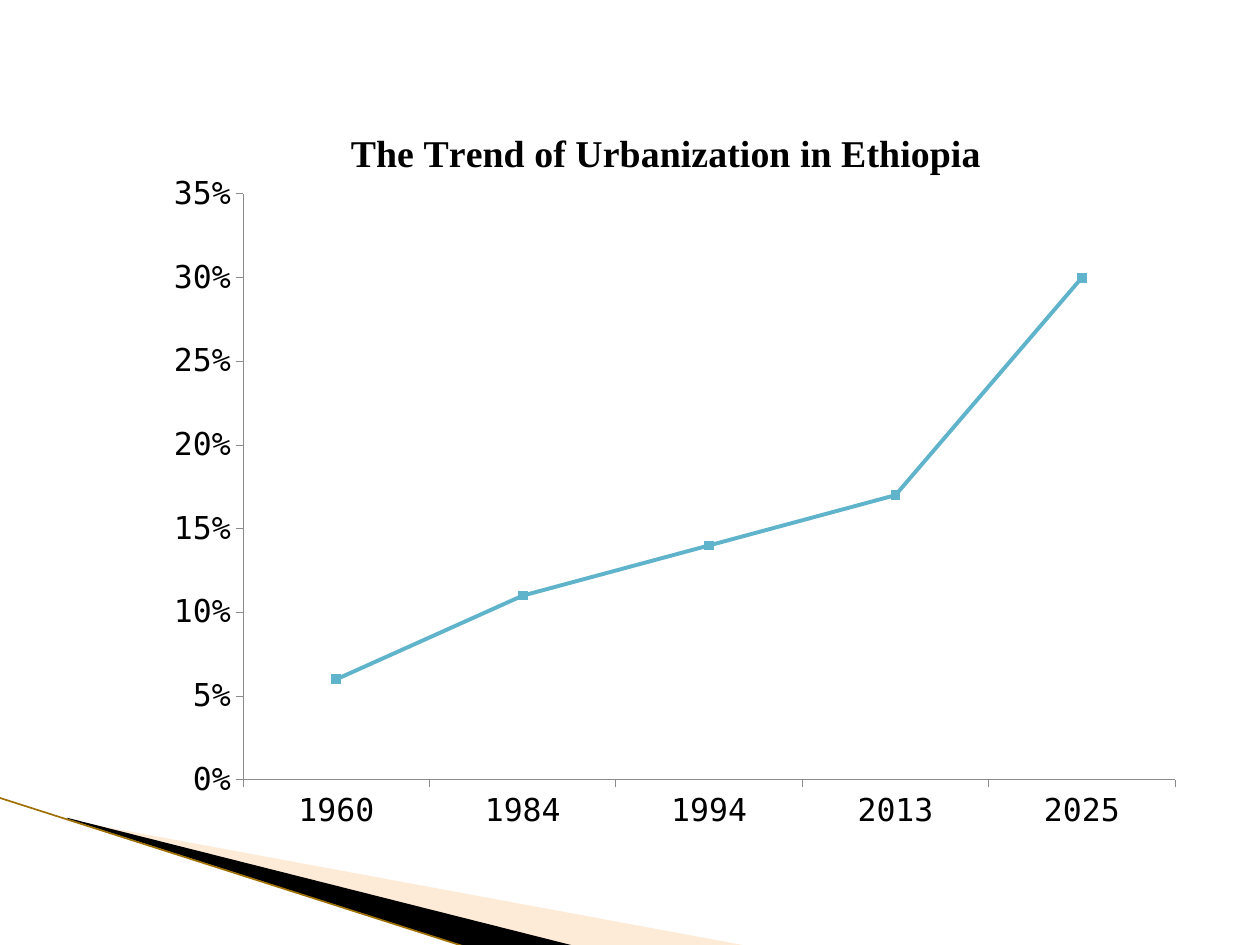
import pptx
import pptx.chart.data
import pptx.dml.color
import pptx.enum.chart
import pptx.enum.shapes
import pptx.oxml
import pptx.util
from pptx.oxml.ns import nsdecls, qn

Inches, Pt = pptx.util.Inches, pptx.util.Pt

# Content
TITLE = "The Trend of Urbanization in Ethiopia"
URBAN_SHARE = {"1960": 0.06, "1984": 0.11, "1994": 0.14, "2013": 0.17, "2025": 0.3}

THEME = {
    "text": "000000", "axis": "8B8B8B", "series": "5FB3CB", "edge": "9E7000",
    "peach": "FCCF9B", "black": "000000",
    "title_font": "Times New Roman", "label_font": "DejaVu Sans Mono",
    "title_size": 21.6, "label_size": 18,
}

# Corner decoration: colour, opacity in percent, outline in inches
WEDGES = [
    ("peach", 40, [(0.55, 6.51), (5.95, 7.51), (4.56, 7.51), (0.55, 6.5)]),
    ("black", 100, [(0.53, 6.49), (4.57, 7.51), (3.72, 7.52), (0.54, 6.5)]),
]
EDGE = (-0.01, 6.33, 3.71, 7.52)

# Chart frame on the slide; title and plot area in inches inside it
CHART_BOX = (1.25, 0.83, 8.08, 5.92)
PLOT_AREA = {"x": 0.68, "y": 0.71, "w": 7.4, "h": 4.65}
TITLE_POS = {"x": 1.48, "y": 0.14}


def color(name):
    return pptx.dml.color.RGBColor.from_string(THEME[name])


def set_font(font, family, size, bold=False):
    font.name = THEME[family]
    font.size = Pt(THEME[size])
    font.bold = bold
    font.color.rgb = color("text")


def add_wedge(s, fill, opacity, points):
    builder = s.shapes.build_freeform(*map(Inches, points[0]), scale=1.0)
    builder.add_line_segments([(Inches(x), Inches(y)) for x, y in points[1:]])
    sp = builder.convert_to_shape()
    sp.shadow.inherit = False
    sp.fill.solid()
    sp.fill.fore_color.rgb = color(fill)
    sp.line.fill.background()
    if opacity < 100:
        clr = sp._element.spPr.find(".//" + qn("a:srgbClr"))
        clr.append(pptx.oxml.parse_xml(
            f'<a:alpha {nsdecls("a")} val="{opacity * 1000}"/>'))


def set_layout(parent, position, after=None, inner=False):
    """Place a chart part; inches become fractions of the chart frame."""
    for old in parent.findall(qn("c:layout")):
        parent.remove(old)
    width, height = CHART_BOX[2:]
    target = '<c:layoutTarget val="inner"/>' if inner else ""
    modes = "".join(f'<c:{k}Mode val="edge"/>' for k in "xy")
    values = "".join(
        f'<c:{k} val="{v / (width if k in "xw" else height)}"/>'
        for k, v in position.items())
    layout = pptx.oxml.parse_xml(
        f'<c:layout {nsdecls("c")}><c:manualLayout>{target}{modes}{values}'
        '</c:manualLayout></c:layout>')
    if after is None:
        parent.insert(0, layout)
    else:
        after.addnext(layout)


def add_trend_chart(s):
    data = pptx.chart.data.CategoryChartData(number_format="0%")
    data.categories = list(URBAN_SHARE)
    data.add_series("Series 1", list(URBAN_SHARE.values()))
    chart = s.shapes.add_chart(
        pptx.enum.chart.XL_CHART_TYPE.LINE_MARKERS,
        *map(Inches, CHART_BOX), data).chart
    set_font(chart.font, "label_font", "label_size")
    chart.has_legend = False

    # Title
    chart.has_title = True
    p = chart.chart_title.text_frame.paragraphs[0]
    p.text = TITLE
    set_font(p.font, "title_font", "title_size", bold=True)
    chart.chart_title.include_in_layout = False
    title = chart.chart_title._element
    set_layout(title, TITLE_POS, after=title.find(qn("c:tx")))
    set_layout(chart._chartSpace.chart.plotArea, PLOT_AREA, inner=True)

    # Axes
    for axis in (chart.category_axis, chart.value_axis):
        axis.has_major_gridlines = False
        axis.major_tick_mark = pptx.enum.chart.XL_TICK_MARK.OUTSIDE
        axis.format.line.color.rgb = color("axis")
        axis.format.line.width = Pt(0.5)
        set_font(axis.tick_labels.font, "label_font", "label_size")
    axis = chart.value_axis
    axis.minimum_scale, axis.maximum_scale, axis.major_unit = 0, 0.35, 0.05
    axis.tick_labels.number_format = "0%"
    axis.tick_labels.number_format_is_linked = False

    # Series
    chart.plots[0].vary_by_categories = False
    series = chart.plots[0].series[0]
    series.smooth = False
    series.format.line.color.rgb = color("series")
    series.format.line.width = Pt(2.25)
    series.marker.style = pptx.enum.chart.XL_MARKER_STYLE.SQUARE
    series.marker.size = 5
    series.marker.format.fill.solid()
    series.marker.format.fill.fore_color.rgb = color("series")
    series.marker.format.line.color.rgb = color("series")


def main():
    prs = pptx.Presentation()
    prs.slide_width, prs.slide_height = Inches(10), Inches(7.5)
    s = prs.slides.add_slide(prs.slide_layouts[6])

    # Corner decoration
    for wedge in WEDGES:
        add_wedge(s, *wedge)
    edge = s.shapes.add_connector(
        pptx.enum.shapes.MSO_CONNECTOR.STRAIGHT, *map(Inches, EDGE))
    edge.line.color.rgb = color("edge")
    edge.line.width = Pt(0.95)
    edge._element.spPr.append(
        pptx.oxml.parse_xml(f'<a:effectLst {nsdecls("a")}/>'))

    add_trend_chart(s)
    prs.save("out.pptx")


if __name__ == "__main__":
    main()
